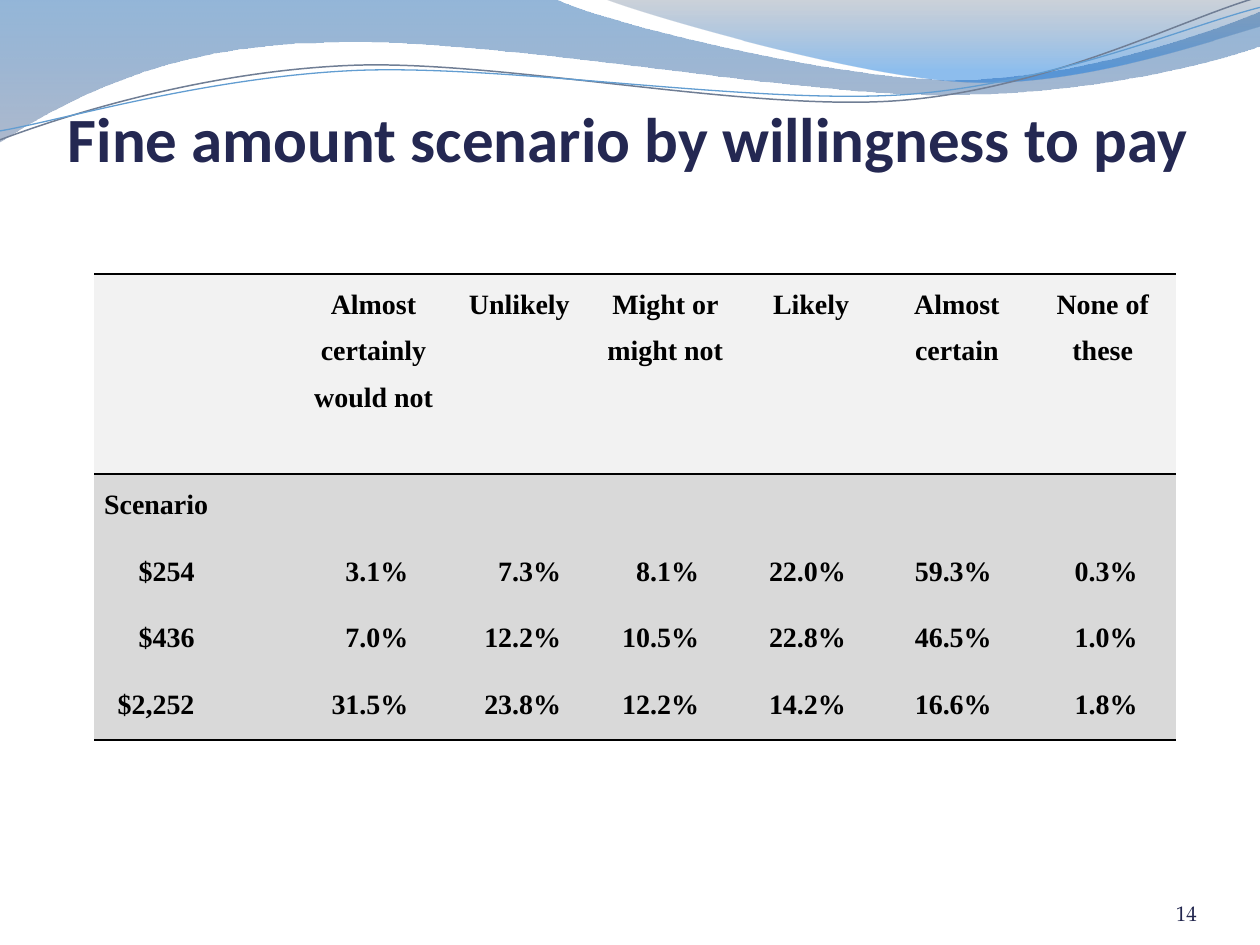
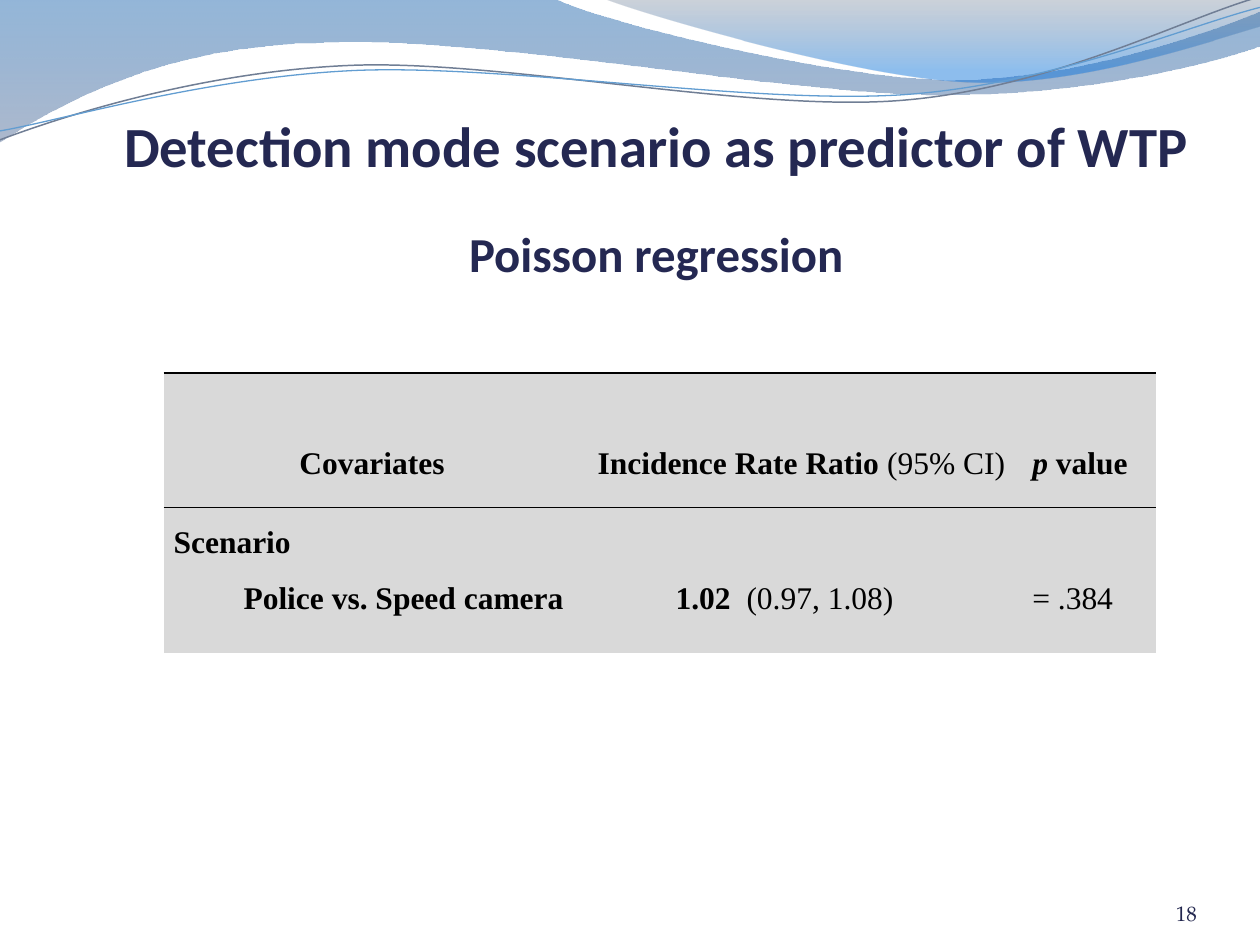
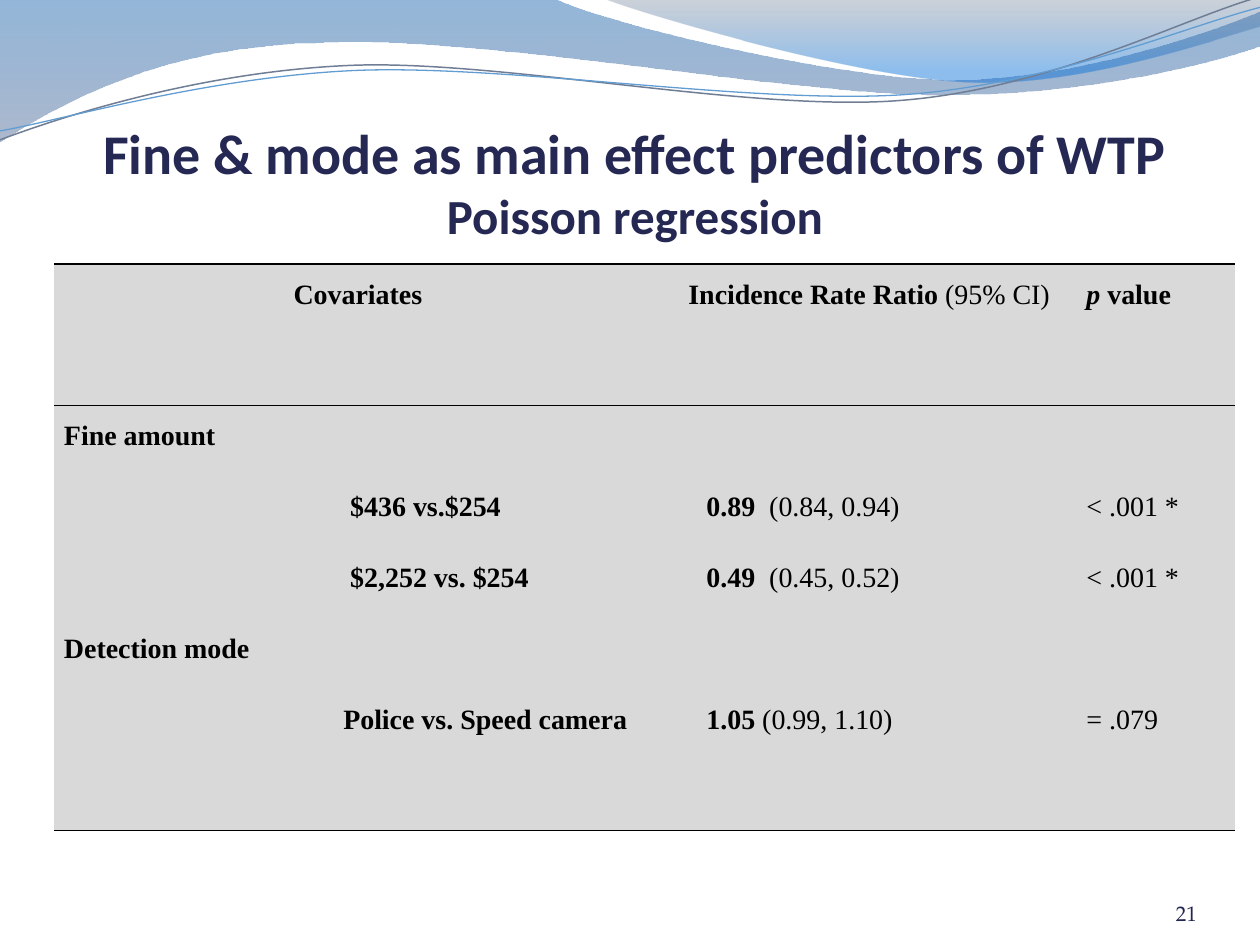
"""Builds three slides of willingness-to-pay results under a shared wave band."""
import dataclasses
import typing

import lxml.etree
import pptx
import pptx.dml.color
import pptx.enum.text
import pptx.oxml
import pptx.oxml.ns
import pptx.util

Cm = pptx.util.Cm
Pt = pptx.util.Pt
qn = pptx.oxml.ns.qn
ALIGN = pptx.enum.text.PP_ALIGN
ANCHOR = pptx.enum.text.MSO_ANCHOR

NAVY, FOLIO, BLACK = "242852", "22264E", "000000"
HEADER_GREY, BODY_GREY = "F2F2F2", "D9D9D9"
TITLE_FONT, TABLE_FONT, FOLIO_FONT = "Calibri", "Times New Roman", "TeX Gyre Pagella"
NO_STYLE = "{2D5ABB26-0587-4C30-8999-92F81FD0307C}"

Point = tuple[float, float]


class Stop(typing.NamedTuple):
    position: float
    color: str
    alpha: int


@dataclasses.dataclass(frozen=True)
class Wave:
    start: Point
    segments: tuple[tuple[Point, ...], ...]
    stops: tuple[Stop, ...] = ()
    stroke: str = ""
    weight: float = 0


class Run(typing.NamedTuple):
    text: str
    bold: bool = True
    italic: bool = False
    tracking: float = 0


class Entry(typing.NamedTuple):
    runs: tuple[Run, ...] = ()
    align: ALIGN = ALIGN.LEFT
    left: float = 0.2
    right: float = 0.2
    top: float = 0


class TitleLine(typing.NamedTuple):
    text: str
    size: float
    before: float = 0


@dataclasses.dataclass(frozen=True)
class Results:
    left: float
    top: float
    columns: tuple[float, ...]
    rows: tuple[float, ...]
    entries: list[list[Entry]]
    size: float
    header_fill: str = BODY_GREY
    closing_rule: bool = True


@dataclasses.dataclass(frozen=True)
class Page:
    number: int
    title_box: tuple[float, float, float, float]
    title: tuple[TitleLine, ...]
    results: Results


WAVES = (
    Wave((0, -0.03), (
        ((11.18, -0.03),),
        ((12.09, 0.43), (16.87, 1.6), (19.25, 1.6)),
        ((21.67, 1.6), (24.33, 0.66), (25.4, 0.23)),
        ((25.43, 0.91),),
        ((24.97, 1.12), (22.1, 1.93), (18.95, 1.91)),
        ((15.8, 1.91), (9.7, 0.71), (6.53, 0.86)),
        ((3.28, 0.89), (1.17, 2.11), (-0.03, 2.87)),
    ), stops=(Stop(0, "125EAA", 45), Stop(1, "697FA4", 55))),
    Wave((12.17, -0.03), (
        ((12.93, 0.28), (17.32, 1.57), (19.53, 1.65)),
        ((21.74, 1.75), (24.41, 0.81), (25.4, 0.53)),
        ((25.4, 0),),
    ), stops=(Stop(0, "596982", 30), Stop(0.8, "0670DA", 45))),
    Wave((0, 2.82), (
        ((1.22, 2.36), (4.01, 1.45), (7.04, 1.32)),
        ((10.03, 1.19), (15.06, 2.26), (18.11, 2.03)),
        ((21.16, 1.8), (23.83, 0.38), (25.35, -0.05)),
    ), stroke="707E95", weight=0.85),
    Wave((0, 2.64), (
        ((1.19, 2.44), (4.17, 1.55), (7.19, 1.42)),
        ((10.24, 1.3), (15.16, 2.11), (18.21, 1.91)),
        ((21.23, 1.7), (23.9, 0.53), (25.4, 0.15)),
    ), stroke="629DD1", weight=0.75),
)


def rgb(value: str) -> pptx.dml.color.RGBColor:
    return pptx.dml.color.RGBColor.from_string(value)


def bend_segments(outline, wave: Wave) -> None:
    steps = iter(list(outline.element.iter(qn("a:lnTo"))))
    for segment in wave.segments:
        first, *others = [next(steps) for _ in segment]
        if others:
            curve = lxml.etree.Element(qn("a:cubicBezTo"))
            first.addprevious(curve)
            for step in (first, *others):
                curve.append(step[0])
                step.getparent().remove(step)


def draw_wave(slide, wave: Wave):
    (x, y), *rest = [(Cm(px), Cm(py))
                     for px, py in (wave.start, *sum(wave.segments, ()))]
    builder = slide.shapes.build_freeform(x, y)
    builder.add_line_segments(rest, close=bool(wave.stops))
    outline = builder.convert_to_shape()
    bend_segments(outline, wave)
    outline.shadow.inherit = False
    if not wave.stops:
        outline.fill.background()
        outline.line.color.rgb = rgb(wave.stroke)
        outline.line.width = Pt(wave.weight)
        return outline
    outline.line.fill.background()
    outline.fill.gradient()
    outline.fill.gradient_angle = 270
    for gradient_stop, stop in zip(outline.fill.gradient_stops, wave.stops):
        gradient_stop.position = stop.position
        gradient_stop.color.rgb = rgb(stop.color)
    colors = outline.element.spPr.iter(qn("a:srgbClr"))
    for color, stop in zip(colors, wave.stops):
        color.append(pptx.oxml.parse_xml(
            f'<a:alpha {pptx.oxml.ns.nsdecls("a")} val="{stop.alpha * 1000}"/>'))
    return outline


def move_waves_to_layout(slide) -> None:
    for wave in WAVES:
        slide.slide_layout.shapes.element.append(draw_wave(slide, wave).element)


def add_run(paragraph, words: Run, font: str, size: float, color: str) -> None:
    run = paragraph.add_run()
    run.text = words.text
    run.font.name = font
    run.font.size = Pt(size)
    run.font.color.rgb = rgb(color)
    run.font.bold = words.bold
    run.font.italic = words.italic
    if words.tracking:
        run._r.get_or_add_rPr().set("spc", str(round(words.tracking * 100)))


def set_frame(frame, top: float = 0) -> None:
    frame.word_wrap = True
    frame.auto_size = pptx.enum.text.MSO_AUTO_SIZE.NONE
    frame.vertical_anchor = ANCHOR.BOTTOM
    frame.margin_left = frame.margin_right = frame.margin_bottom = 0
    frame.margin_top = Cm(top)


def set_title(slide, page: Page) -> None:
    title = slide.shapes.title
    title.left, title.top, title.width, title.height = map(Cm, page.title_box)
    frame = title.text_frame
    set_frame(frame, 0.13)
    for index, line in enumerate(page.title):
        paragraph = frame.add_paragraph() if index else frame.paragraphs[0]
        paragraph.alignment = ALIGN.CENTER
        if line.before:
            paragraph.space_before = Pt(line.before)
        add_run(paragraph, Run(line.text), TITLE_FONT, line.size, NAVY)


def set_borders(cell, ruled: set[str]) -> None:
    rule = f'<a:solidFill><a:srgbClr val="{BLACK}"/></a:solidFill>'
    for position, side in enumerate(("lnL", "lnR", "lnT", "lnB")):
        paint = rule if side in ruled else "<a:noFill/>"
        cell._tc.get_or_add_tcPr().insert(position, pptx.oxml.parse_xml(
            f'<a:{side} {pptx.oxml.ns.nsdecls("a")} w="12700">{paint}</a:{side}>'))


def fill_cell(cell, entry: Entry, size: float, fill: str) -> None:
    cell.fill.solid()
    cell.fill.fore_color.rgb = rgb(fill)
    cell.margin_left, cell.margin_right = Cm(entry.left), Cm(entry.right)
    cell.margin_top, cell.margin_bottom = Cm(entry.top), 0
    paragraph = cell.text_frame.paragraphs[0]
    paragraph.alignment = entry.align
    if entry.runs:
        paragraph.line_spacing = 1.5
    for run in entry.runs:
        add_run(paragraph, run, TABLE_FONT, size, BLACK)


def add_results(slide, results: Results) -> None:
    frame = slide.shapes.add_table(
        len(results.rows), len(results.columns), Cm(results.left), Cm(results.top),
        Cm(sum(results.columns)), Cm(sum(results.rows)))
    table = frame.table
    table.first_row = table.horz_banding = False
    for style in frame.element.iter(qn("a:tableStyleId")):
        style.text = NO_STYLE
    for column, width in zip(table.columns, results.columns):
        column.width = Cm(width)
    for row, height in zip(table.rows, results.rows):
        row.height = Cm(height)
    ruled_edges = {0, 1} | ({len(results.rows)} if results.closing_rule else set())
    for r, entries in enumerate(results.entries):
        ruled = {side for side, edge in (("lnT", r), ("lnB", r + 1)) if edge in ruled_edges}
        for c, entry in enumerate(entries):
            cell = table.cell(r, c)
            fill_cell(cell, entry, results.size, BODY_GREY if r else results.header_fill)
            set_borders(cell, ruled)


def add_page_number(slide, number: int) -> None:
    box = slide.shapes.add_textbox(Cm(22.02), Cm(17.65), Cm(2.11), Cm(1.02))
    set_frame(box.text_frame)
    paragraph = box.text_frame.paragraphs[0]
    paragraph.alignment = ALIGN.RIGHT
    add_run(paragraph, Run(str(number), False), FOLIO_FONT, 12, FOLIO)


def heading_row(label: str, columns: int) -> list[Entry]:
    return [Entry((Run(label),))] + [Entry()] * (columns - 1)


def share_rows() -> list[list[Entry]]:
    answers = ("Almost certainly would not", "Unlikely", "Might or might not",
               "Likely", "Almost certain", "None of these")
    shares = (
        ("$254", "3.1%", "7.3%", "8.1%", "22.0%", "59.3%", "0.3%"),
        ("$436", "7.0%", "12.2%", "10.5%", "22.8%", "46.5%", "1.0%"),
        ("$2,252", "31.5%", "23.8%", "12.2%", "14.2%", "16.6%", "1.8%"),
    )
    right_gaps = (2.14, 0.77, 0.63, 0.79, 0.77, 0.77, 0.77)
    header = [Entry()] + [Entry((Run(answer),), ALIGN.CENTER) for answer in answers]
    body = [[Entry((Run(share),), ALIGN.RIGHT, right=gap)
             for share, gap in zip(row, right_gaps)] for row in shares]
    return [header, heading_row("Scenario", len(right_gaps)), *body]


def regression_header(top: float = 0) -> list[Entry]:
    return [
        Entry((Run("Covariates"),), ALIGN.CENTER, top=top),
        Entry((Run("Incidence Rate Ratio "), Run("(95% CI)", False)), ALIGN.CENTER, top=top),
        Entry((Run("p", italic=True), Run(" value")), top=top),
    ]


def covariate_row(label: str, label_left: float, ratio: str, interval: str,
                  ratio_left: float, p_value: str, gap: float = 0) -> list[Entry]:
    ratio_runs = (Run(ratio), Run(" ", False, tracking=gap), Run(interval, False))
    return [
        Entry((Run(label),), left=label_left),
        Entry(ratio_runs, left=ratio_left),
        Entry((Run(p_value, False),)),
    ]


PAGES = (
    Page(14, (1.13, 1.96, 23.06, 1.57),
         (TitleLine("Fine amount scenario by willingness to pay", 36),),
         Results(1.9, 5.52, (4.16,) + (2.94,) * 6, (4.04,) + (1.34,) * 4,
                 share_rows(), 16, header_fill=HEADER_GREY)),
    Page(18, (1.7, 2.72, 23.06, 2.97),
         (TitleLine("Detection mode scenario as predictor of WTP", 32.4),
          TitleLine("Poisson regression", 27.9, before=25.4)),
         Results(3.3, 7.52, (8.4, 8.91, 2.69), (2.71, 1.14, 1.8), [
             regression_header(top=1.13),
             heading_row("Scenario", 3),
             covariate_row("Police vs. Speed camera", 1.61,
                           "1.02", "(0.97, 1.08)", 1.92, "= .384", gap=4.5),
         ], 18, closing_rule=False)),
    Page(21, (1.27, 1.73, 23.06, 3.2),
         (TitleLine("Fine & mode as main effect predictors of WTP", 32),
          TitleLine("Poisson regression", 28)),
         Results(1.09, 5.32, (12.25, 8.36, 3.19), (2.85,) + (1.43,) * 4 + (2.85,), [
             regression_header(),
             heading_row("Fine amount", 3),
             covariate_row("$436 vs.$254", 5.97,
                           "0.89", "(0.84, 0.94)", 0.9, "< .001 *", gap=4),
             covariate_row("$2,252 vs. $254", 5.97,
                           "0.49", "(0.45, 0.52)", 0.9, "< .001 *", gap=4),
             heading_row("Detection mode", 3),
             covariate_row("Police vs. Speed camera", 5.83,
                           "1.05", "(0.99, 1.10)", 0.9, "= .079"),
         ], 16)),
)


def main() -> None:
    deck = pptx.Presentation()
    deck.slide_width, deck.slide_height = Cm(25.4), Cm(19.05)
    title_only = deck.slide_layouts.get_by_name("Title Only")
    for index, page in enumerate(PAGES):
        slide = deck.slides.add_slide(title_only)
        if index == 0:
            move_waves_to_layout(slide)
        set_title(slide, page)
        add_results(slide, page.results)
        add_page_number(slide, page.number)
    deck.save("out.pptx")


if __name__ == "__main__":
    main()
